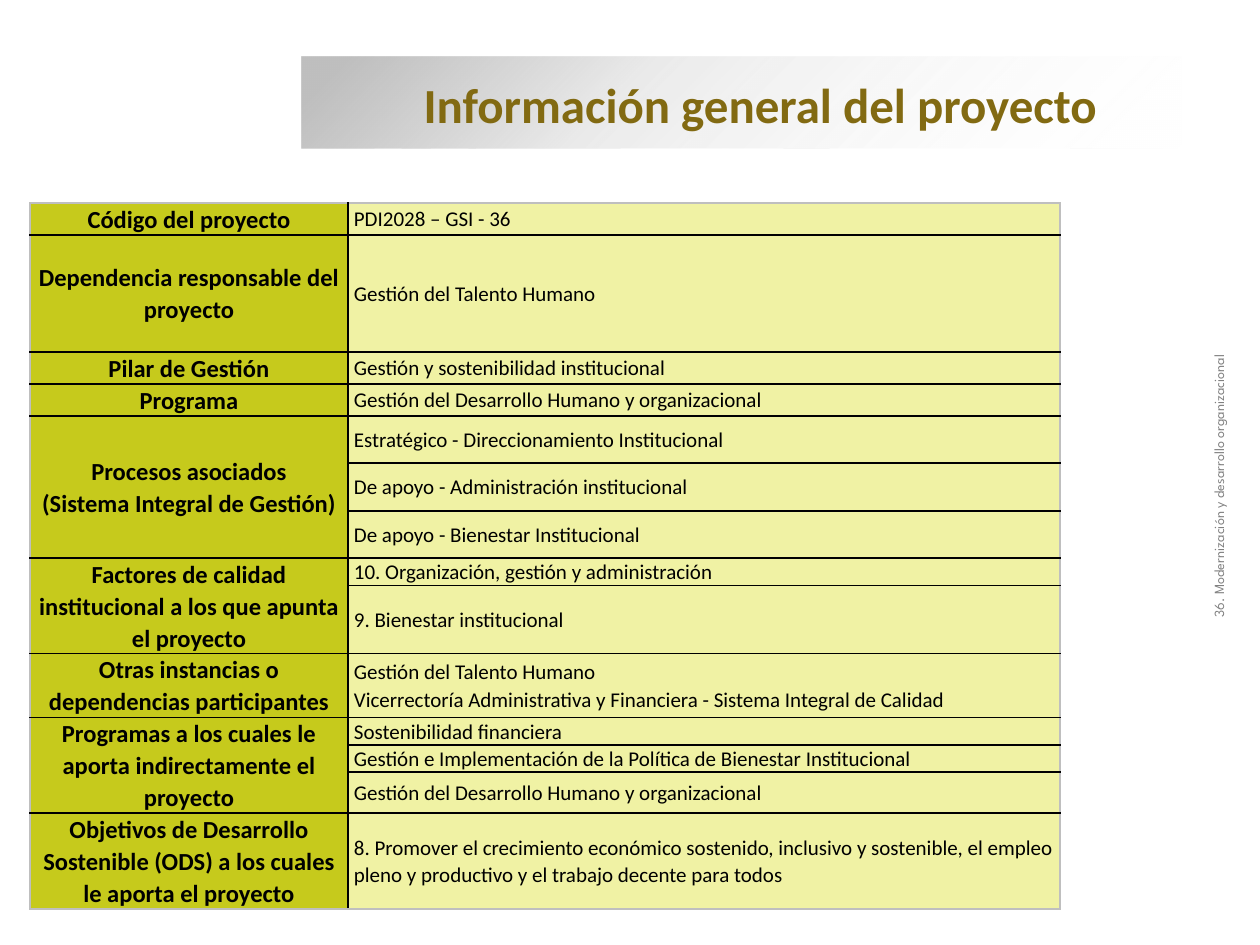
from lxml import etree
from pptx import Presentation
from pptx.dml.color import RGBColor
from pptx.enum.shapes import MSO_SHAPE
from pptx.enum.text import MSO_ANCHOR, MSO_AUTO_SIZE, PP_ALIGN
from pptx.oxml.ns import qn
from pptx.util import Pt

RECT = MSO_SHAPE.RECTANGLE
MID = MSO_ANCHOR.MIDDLE
LEFT, CENTER = PP_ALIGN.LEFT, PP_ALIGN.CENTER
FIXED = MSO_AUTO_SIZE.NONE

# Content: label, then (row height in px, text) for each row it covers
TITLE = "Información general del proyecto"
SIDE = "36. Modernización y desarrollo organizacional"
GROUPS = [
    ("Código del proyecto", [(31, "PDI2028 – GSI - 36")]),
    ("Dependencia responsable del proyecto", [(117, "Gestión del Talento Humano")]),
    ("Pilar de Gestión", [(31, "Gestión y sostenibilidad institucional")]),
    ("Programa", [(32, "Gestión del Desarrollo Humano y organizacional")]),
    ("Procesos asociados\v(Sistema Integral de Gestión)", [
        (47, "Estratégico - Direccionamiento Institucional"),
        (48, "De apoyo - Administración institucional"),
        (47, "De apoyo - Bienestar Institucional")]),
    ("Factores de calidad institucional a los que apunta el proyecto", [
        (28, "10. Organización, gestión y administración"),
        (67, "9. Bienestar institucional")]),
    ("Otras instancias o dependencias participantes", [
        (63, "Gestión del Talento Humano\nVicerrectoría Administrativa y Financiera"
             " - Sistema Integral de Calidad")]),
    ("Programas a los cuales le aporta indirectamente el proyecto", [
        (27, "Sostenibilidad financiera"),
        (27, "Gestión e Implementación de la Política de Bienestar Institucional"),
        (40, "Gestión del Desarrollo Humano y organizacional")]),
    ("Objetivos de Desarrollo Sostenible (ODS) a los cuales le aporta el proyecto", [
        (94, "8. Promover el crecimiento económico sostenido, inclusivo y sostenible, "
             "el empleo pleno y productivo y el trabajo decente para todos")]),
]
COLS = (318, 712)

THEME = {
    "font": "Calibri", "side_font": "League Spartan",
    "title": "826A12", "side": "808080", "text": "000000",
    "label_fill": "C6CA1C", "value_fill": "F0F2A4",
    "grid": "000000", "frame": "BFBFBF",
    "band": [(5, "BFBFBF", 100), (37, "BFBFBF", 31), (100, "FFFFFF", 0)],
    "title_pt": 28, "label_pt": 14, "value_pt": 12, "side_pt": 8,
}


def px(n):
    return n * 914400 // 126


def style(frame, font, size, color, bold=False, align=LEFT, space=None):
    for para in frame.paragraphs:
        para.alignment = align
        if space:
            para.line_spacing = space
        for run in para.runs:
            run.font.name = font
            run.font.size = Pt(size)
            run.font.bold = bold
            run.font.color.rgb = RGBColor.from_string(color)


def add_color(parent, color, alpha=100):
    node = etree.SubElement(parent, qn("a:srgbClr"), val=color)
    if alpha < 100:
        etree.SubElement(node, qn("a:alpha"), val=str(alpha * 1000))


def fade(shape, stops, angle):
    shape.fill.gradient()
    grad = shape.fill._xPr.find(qn("a:gradFill"))
    for child in list(grad):
        grad.remove(child)
    group = etree.SubElement(grad, qn("a:gsLst"))
    for pos, color, alpha in stops:
        add_color(etree.SubElement(group, qn("a:gs"), pos=str(pos * 1000)), color, alpha)
    etree.SubElement(grad, qn("a:lin"), ang=str(angle * 60000), scaled="0")


def set_edges(cell, outer):
    props = cell._tc.get_or_add_tcPr()
    for side in "LRTB":
        line = etree.SubElement(props, qn("a:ln" + side), w=str(Pt(1)))
        fill = etree.SubElement(line, qn("a:solidFill"))
        add_color(fill, THEME["frame" if side in outer else "grid"])


def fill_cell(cell, text, kind, pad, bold, align):
    cell.text = text
    cell.vertical_anchor = MID
    cell.margin_left = cell.margin_right = px(pad)
    cell.margin_top = cell.margin_bottom = 0
    style(cell.text_frame, THEME["font"], THEME[kind + "_pt"], THEME["text"],
          bold, align, 1.07)


def add_grid(slide):
    rows = [row for _, part in GROUPS for row in part]
    high = sum(h for h, _ in rows)
    table = slide.shapes.add_table(len(rows), 2, px(30), px(203),
                                   px(sum(COLS)), px(high)).table
    table.first_row = table.horz_banding = False
    for col, wide in zip(table.columns, COLS):
        col.width = px(wide)

    # Values, fills and edges
    last = len(rows) - 1
    for i, (h, text) in enumerate(rows):
        table.rows[i].height = px(h)
        ends = ("T" if i == 0 else "") + ("B" if i == last else "")
        for j, kind in enumerate(("label", "value")):
            cell = table.cell(i, j)
            set_edges(cell, ends + "LR"[j])
            cell.fill.solid()
            cell.fill.fore_color.rgb = RGBColor.from_string(THEME[kind + "_fill"])
        fill_cell(table.cell(i, 1), text, "value", 6, False, LEFT)

    # Labels, merged over the rows they cover
    top = 0
    for label, part in GROUPS:
        cell, end = table.cell(top, 0), top + len(part) - 1
        if end > top:
            cell.merge(table.cell(end, 0))
        fill_cell(cell, label, "label", 5, True, CENTER)
        top = end + 1


def place(shape, left, top, wide, high):
    shape.left, shape.top = px(left), px(top)
    shape.width, shape.height = px(wide), px(high)


def main():
    deck = Presentation()
    deck.slide_width, deck.slide_height = px(1260), px(945)
    slide = deck.slides.add_slide(deck.slide_layouts[5])

    # Title over a fading band
    title = slide.shapes.title
    band = slide.shapes.add_shape(RECT, px(302), px(57), px(880), px(91))
    band.shadow.inherit = False
    band.line.fill.background()
    fade(band, THEME["band"], 45)
    title._element.addprevious(band._element)
    place(title, 411, 68, 781, 72)
    frame = title.text_frame
    frame.text = TITLE
    frame.word_wrap = True
    frame.auto_size = FIXED
    frame.vertical_anchor = MID
    style(frame, THEME["font"], THEME["title_pt"], THEME["title"], True)

    add_grid(slide)

    # Side note, read upwards
    note = slide.shapes.add_textbox(px(914), px(471), px(610), px(30))
    note.rotation = 270
    note.text_frame.word_wrap = True
    note.text_frame.text = SIDE
    style(note.text_frame, THEME["side_font"], THEME["side_pt"], THEME["side"],
          align=CENTER)

    deck.save("out.pptx")


if __name__ == "__main__":
    main()
